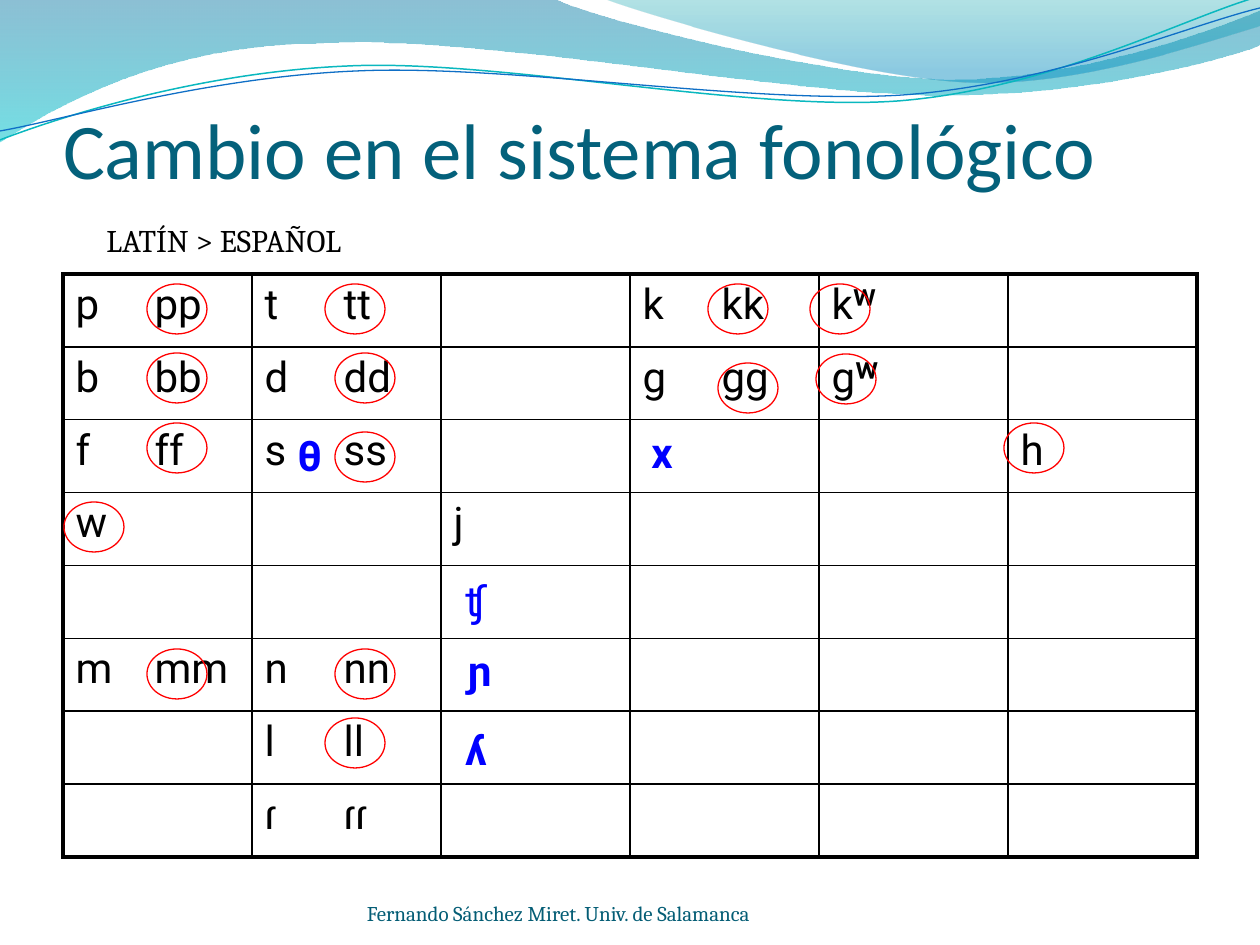
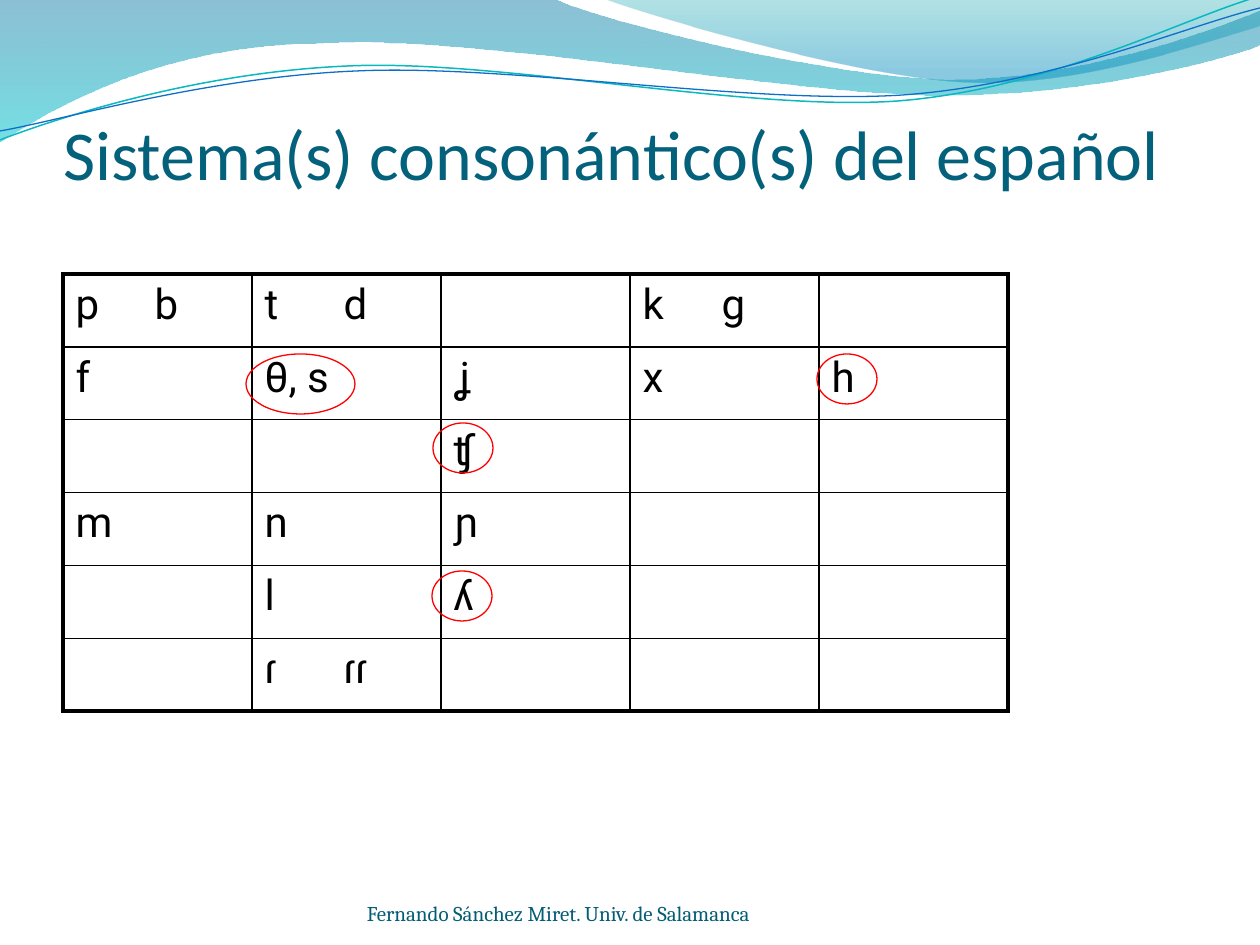
from math import cos, radians, sin

from lxml.etree import SubElement
from pptx import Presentation
from pptx.dml.color import RGBColor
from pptx.enum.shapes import MSO_SHAPE
from pptx.enum.text import MSO_ANCHOR, MSO_AUTO_SIZE, PP_ALIGN
from pptx.oxml.ns import qn
from pptx.util import Emu, Pt

SCALE = 914400 / 126
BLACK, RED, BLUE = "000000", "FF0000", "0000FF"
TITLE, FOOT = "04617B", "045D75"
HEAD, BODY, SIGN = "Calibri", "Cambria", "Roboto"
LEFT, TOP, COL, TAB = 63, 274, 189, 79
ROW = 583 / 8
TURN = 357.3

BANDS = [
    ([(0, -1), (554, -1), (600, 21, 837, 79, 955, 79),
      (1074, 79, 1207, 33, 1260, 11), (1261, 45),
      (1239, 55, 1096, 96, 940, 95), (784, 95, 481, 35, 324, 43),
      (163, 44, 58, 105, -1, 142), (0, -1)],
     (-1, -1, 1262, 143), [(0, "0074A1", 45), (1, "00C6CF", 55)]),
    ([(604, -1), (641, 14, 859, 78, 969, 82),
      (1079, 87, 1211, 40, 1260, 26), (1260, 0), (604, -1)],
     (604, -1, 656, 88), [(0, "00A1A9", 30), (0.8, "008BBF", 45)]),
]
WAVES = [
    ([(0, 140), (60, 117, 199, 72, 349, 66), (498, 59, 747, 112, 898, 101),
      (1050, 89, 1182, 19, 1257, -3)], (-3, 28, 1263, 89), "0AB8BF", 0.85),
    ([(0, 131), (59, 121, 207, 77, 357, 71), (508, 64, 752, 105, 903, 95),
      (1053, 84, 1186, 26, 1260, 8)], (-3, 38, 1264, 73), "0F6FC6", 0.75),
]

CHANGE = [
    ["p\tpp", "t\ttt", "", "k\tkk", "kʷ", ""],
    ["b\tbb", "d\tdd", "", "g\tgg", "gʷ", ""],
    ["f\tff", "s\tss", "", "", "", "h"],
    ["w", "", "j", "", "", ""],
    [""] * 6,
    ["m\tmm", "n\tnn", "", "", "", ""],
    ["", "l\tll", "", "", "", ""],
    ["", "ɾ\tɾɾ", "", "", "", ""],
]
LOST = [
    (147, 353), (147, 423), (147, 284), (335, 649), (335, 353),
    (335, 432), (325, 284), (708, 284), (718, 363), (810, 284),
    (816, 354), (325, 718), (64, 502), (147, 649), (1004, 423),
]
NEW = [("x", 639, 420, True), ("ʧ", 453, 568, False), ("ɲ", 453, 638, True),
       ("ʎ", 453, 717, True), ("θ", 285, 423, True)]
SPANISH = [
    ["p\tb", "t\td", "", "k\tg", ""],
    ["f", "θ, s", "ʝ", "x", "h"],
    ["", "", "ʧ", "", ""],
    ["m", "n", "ɲ", "", ""],
    ["", "l", "ʎ", "", ""],
    ["", "ɾ\tɾɾ", "", "", ""],
]


def px(num):
    return Emu(round(num * SCALE))


def tint(code):
    return RGBColor.from_string(code)


def write(frame, text, size=24, font=SIGN, color=BLACK, bold=False,
          align=PP_ALIGN.LEFT, tab=None):
    para = frame.paragraphs[0]
    para.alignment = align
    if tab:
        tabs = SubElement(para._p.get_or_add_pPr(), qn("a:tabLst"))
        SubElement(tabs, qn("a:tab"), pos=str(px(tab)), algn="l")
    run = para.add_run()
    run.text = text
    run.font.size = Pt(size)
    run.font.name = font
    run.font.bold = bold
    run.font.color.rgb = tint(color)


def inset(frame, top=0):
    frame.margin_left = frame.margin_right = frame.margin_bottom = 0
    frame.margin_top = px(top)
    frame.vertical_anchor = MSO_ANCHOR.BOTTOM


def label(slide, text, x, y, w, h, **form):
    frame = slide.shapes.add_textbox(px(x), px(y), px(w), px(h)).text_frame
    frame.word_wrap = True
    write(frame, text, **form)
    return frame


def spin(x, y, box, turn):
    left, top, wide, high = box
    dx, dy = x - left - wide / 2, y - top - high / 2
    c, s = cos(radians(turn)), sin(radians(turn))
    return px(wide / 2 + dx * c + dy * s), px(high / 2 - dx * s + dy * c)


def curve(slide, parts, box, turn=0):
    pen = slide.shapes.build_freeform(px(parts[0][0]), px(parts[0][1]))
    pen.add_line_segments([(px(p[-2]), px(p[-1])) for p in parts[1:]],
                          close=not turn)
    shape = pen.convert_to_shape()
    shape.left, shape.top, shape.width, shape.height = map(px, box)
    shape.rotation = turn
    shape.shadow.inherit = False
    route = next(shape.element.iter(qn("a:path")))
    route.set("w", str(shape.width))
    route.set("h", str(shape.height))
    for node, part in zip(list(route), parts):
        if len(part) == 6:
            bend = SubElement(route, qn("a:cubicBezTo"))
            route.replace(node, bend)
            node = bend
        for old in list(node):
            node.remove(old)
        for x, y in zip(part[::2], part[1::2]):
            x, y = spin(x, y, box, turn)
            SubElement(node, qn("a:pt"), x=str(x), y=str(y))
    return shape


def band(slide, parts, box, stops):
    shape = curve(slide, parts, box)
    shape.line.fill.background()
    shape.fill.gradient()
    shape.fill.gradient_angle = 270
    for stop, (place, code, alpha) in zip(shape.fill.gradient_stops, stops):
        stop.position = place
        stop.color.rgb = tint(code)
        node = stop._gs.find(qn("a:srgbClr"))
        SubElement(node, qn("a:alpha"), val=str(alpha * 1000))
    return shape


def wave(slide, parts, box, code, width):
    shape = curve(slide, parts, box, TURN)
    shape.fill.background()
    shape.line.color.rgb = tint(code)
    shape.line.width = Pt(width)
    return shape


def dress(layout, slide):
    shapes = [band(slide, *item) for item in BANDS]
    shapes += [wave(slide, *item) for item in WAVES]
    for num, shape in enumerate(shapes, 20):
        shape.element.nvSpPr.cNvPr.set("id", str(num))
        layout.shapes.element.append(shape.element)


def ring(slide, x, y, w=60, h=50):
    shape = slide.shapes.add_shape(MSO_SHAPE.OVAL, px(x), px(y), px(w), px(h))
    shape.shadow.inherit = False
    shape.fill.background()
    shape.line.color.rgb = tint(RED)
    shape.line.width = Pt(0.75)


def edge(cell, side, width):
    line = SubElement(cell._tc.get_or_add_tcPr(), qn("a:ln" + side),
                      w=str(Pt(width)))
    fill = SubElement(line, qn("a:solidFill"))
    SubElement(fill, qn("a:srgbClr"), val=BLACK)


def grid(slide, rows):
    high, wide = len(rows), len(rows[0])
    table = slide.shapes.add_table(high, wide, px(LEFT), px(TOP),
                                   px(wide * COL), px(high * ROW)).table
    table.first_row = table.horz_banding = False
    for col in table.columns:
        col.width = px(COL)
    for r, row in enumerate(rows):
        table.rows[r].height = px(ROW)
        for c, text in enumerate(row):
            cell = table.cell(r, c)
            outer = {"L": c == 0, "R": c == wide - 1,
                     "T": r == 0, "B": r == high - 1}
            for side, thick in outer.items():
                edge(cell, side, 2.25 if thick else 1)
            cell.fill.background()
            if text:
                write(cell.text_frame, text, align=PP_ALIGN.JUSTIFY,
                      tab=TAB if "\t" in text else None)


def start(deck, layout, title, size):
    slide = deck.slides.add_slide(layout)
    head = slide.shapes.title
    head.left, head.top, head.width, head.height = map(px, (63, 38, 1134, 157))
    head.text_frame.auto_size = MSO_AUTO_SIZE.NONE
    inset(head.text_frame, 6)
    write(head.text_frame, title, size=size, font=HEAD, color=TITLE)
    return slide


def sign(slide):
    foot = label(slide, "Fernando Sánchez Miret. Univ. de Salamanca",
                 367, 876, 462, 50, size=12, font=BODY, color=FOOT)
    inset(foot)


def main():
    deck = Presentation()
    deck.slide_width, deck.slide_height = px(1260), px(945)
    layout = deck.slide_layouts[5]

    slide = start(deck, layout, "Cambio en el sistema fonológico", 45)
    dress(layout, slide)
    grid(slide, CHANGE)
    label(slide, "LATÍN > ESPAÑOL", 94, 215, 556, 50, size=18, font=BODY)
    for spot in LOST:
        ring(slide, *spot)
    for text, x, y, bold in NEW:
        label(slide, text, x, y, 79, 63, color=BLUE, bold=bold)
    sign(slide)

    slide = start(deck, layout, "Sistema(s) consonántico(s) del español", 40)
    grid(slide, SPANISH)
    ring(slide, 246, 354, 109, 60)
    for spot in [(433, 423), (432, 571), (817, 354)]:
        ring(slide, *spot)
    sign(slide)

    deck.save("out.pptx")


if __name__ == "__main__":
    main()
